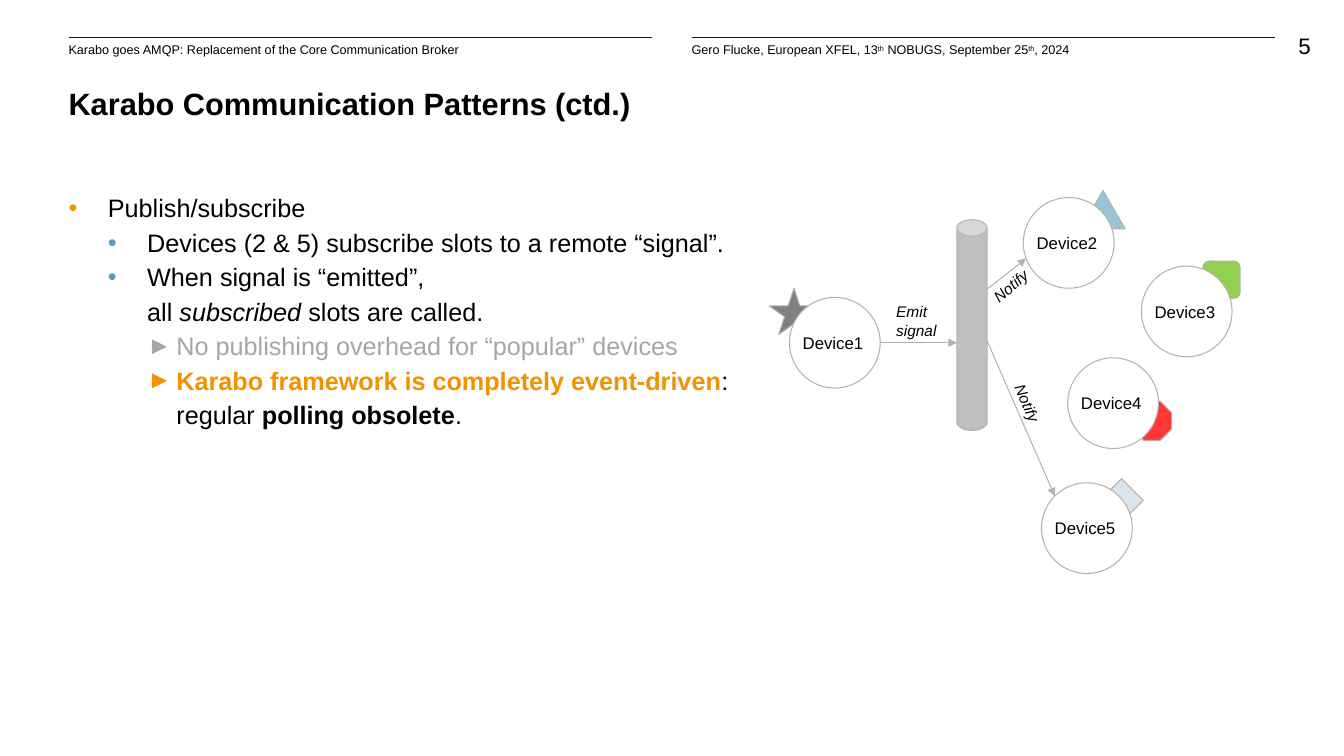
from math import cos, radians, sin

from lxml import etree
from pptx import Presentation
from pptx import util as u
from pptx.dml.color import RGBColor
from pptx.enum import shapes, text
from pptx.oxml.ns import qn

# Content: runs are (words, format)
TITLE = "Karabo Communication Patterns (ctd.)"
PAGE = "5"
HEADS = [
    [("Karabo goes AMQP: Replacement of the Core Communication Broker", {})],
    [("Gero Flucke, European XFEL, 13", {}), ("th", {"up": 30}),
     (" NOBUGS, September 25", {}), ("th", {"up": 30}), (", 2024", {})],
]
POINTS = [  # level, bullet colour, runs
    (0, "orange", [("Publish/subscribe", {})]),
    (1, "blue", [("Devices (2 & 5) subscribe slots to a remote “signal”.", {})]),
    (1, "blue", [("When signal is “emitted”,\nall ", {}),
                 ("subscribed", {"italic": True}), (" slots are called.", {})]),
    (2, "pale", [("No publishing overhead for “popular” devices", {"color": "pale"})]),
    (2, "orange", [("Karabo framework is completely event-driven",
                    {"color": "orange", "bold": True}),
                   (":\nregular ", {}), ("polling obsolete", {"bold": True}), (".", {})]),
]
LEVELS = [("•", 0.39, 0.39), ("•", 0.78, 0.39), ("►", 1.07, 0.29)]  # sign, left, hang

# Name: centre, then badge shape, colour and box
DEVICES = {
    "Device1": ((8.28, 3.4), "STAR_5_POINT", "star", (7.63, 2.86, 0.49, 0.46)),
    "Device2": ((10.6, 2.41), "ISOSCELES_TRIANGLE", "sky", (10.72, 1.89, 0.44, 0.38)),
    "Device3": ((11.77, 3.09), "ROUNDED_RECTANGLE", "green", (11.93, 2.59, 0.37, 0.37)),
    "Device4": ((11.04, 4), "OCTAGON", "red", (11.23, 3.98, 0.39, 0.39)),
    "Device5": ((10.78, 5.24), "DIAMOND", "ice", (10.91, 4.75, 0.43, 0.43)),
}
BROKER = (9.49, 2.18, 0.3, 2.09)
NOTIFY = [("Device2", 160, 2.87), ("Device5", 225, 3.38)]  # target, angle, start height
LABELS = [  # lines, box, turn
    (["Emit", "signal"], (8.79, 2.95, 0.61, 0.47), 0),
    (["Notify"], (9.73, 2.69, 0.6, 0.29), -40.2),
    (["Notify"], (9.89, 3.86, 0.6, 0.29), 66.9),
]

THEME = {
    "font": "Arial",
    "color": {"ink": "000000", "navy": "0D1546", "orange": "F39200", "blue": "559DBB",
              "pale": "A6A6A6", "line": "B2B2B2", "pipe": "BFBFBF", "white": "FFFFFF",
              "star": "808080", "sky": "99C4D6", "green": "92D050", "red": "FF3737",
              "ice": "C5D6E4"},
    "size": {"title": 22, "body": 18, "page": 16, "node": 12, "label": 11, "head": 9},
}

# Page grid: two equal columns
WIDE, HIGH = 13.33, 7.5
EDGE, COL, GAP = 0.68, 5.79, 0.39
FULL = 2 * COL + GAP
RADIUS = 0.45

deck = Presentation()
deck.slide_width, deck.slide_height = u.Inches(WIDE), u.Inches(HIGH)
slide = deck.slides.add_slide(deck.slide_layouts[1])
items = slide.shapes


def inch(*vals):
    return [u.Inches(v) for v in vals]


def tint(name):
    return RGBColor.from_string(THEME["color"][name])


def place(shape, box):
    for key, val in zip(("left", "top", "width", "height"), inch(*box)):
        setattr(shape, key, val)


def setup(shape, anchor="TOP", wrap=True, pad=(0, 0)):
    frame = shape.text_frame
    side, end = inch(*pad)
    form = {"margin_left": side, "margin_right": side, "margin_top": end,
            "margin_bottom": end, "word_wrap": wrap,
            "auto_size": text.MSO_AUTO_SIZE.NONE,
            "vertical_anchor": getattr(text.MSO_ANCHOR, anchor)}
    for key, val in form.items():
        setattr(frame, key, val)
    return frame


def write(para, runs, size, align="LEFT", **base):
    para.alignment = getattr(text.PP_ALIGN, align)
    for words, extra in runs:
        form = {"bold": False, "italic": False, **base, **extra}
        hue, lift = form.pop("color", "ink"), form.pop("up", 0)
        form.update(name=THEME["font"], size=u.Pt(THEME["size"][size]))
        for row, part in enumerate(words.split("\n")):
            if row:
                para.add_line_break()
            run = para.add_run()
            run.text = part
            for key, val in form.items():
                setattr(run.font, key, val)
            run.font.color.rgb = tint(hue)
            if lift:
                run.font._element.set("baseline", str(lift * 1000))


def bullet(para, sign, hue, left, hang):
    props = para._p.get_or_add_pPr()
    props.set("marL", str(u.Inches(left)))
    props.set("indent", str(-u.Inches(hang)))
    color = etree.SubElement(props, qn("a:buClr"))
    etree.SubElement(color, qn("a:srgbClr")).set("val", THEME["color"][hue])
    etree.SubElement(props, qn("a:buFont")).set("typeface", THEME["font"])
    etree.SubElement(props, qn("a:buChar")).set("char", sign)


def draw(kind, box, fill):
    shape = items.add_shape(getattr(shapes.MSO_SHAPE, kind), *inch(*box))
    shape.shadow.inherit = False
    shape.fill.solid()
    shape.fill.fore_color.rgb = tint(fill)
    shape.line.color.rgb = tint("line")
    shape.line.width = u.Pt(0.75)
    return shape


def link(start, end, hue="line", width=0.75, arrow=True):
    line = items.add_connector(shapes.MSO_CONNECTOR.STRAIGHT, *inch(*start, *end))
    line.line.color.rgb = tint(hue)
    line.line.width = u.Pt(width)
    if arrow:
        etree.SubElement(line.line._get_or_add_ln(), qn("a:tailEnd")).set("type", "triangle")
    etree.SubElement(line._element.spPr, qn("a:effectLst"))


# Page header
for num, runs in enumerate(HEADS):
    left = EDGE + num * (COL + GAP)
    link((left, 0.37), (left + COL, 0.37), "navy", 0.5, False)
    head = items.add_textbox(*inch(left, 0.42, COL, 0.24))
    write(setup(head).paragraphs[0], runs, "head")
page = items.add_textbox(*inch(12.44, 0.32, 0.56, 0.32))
write(setup(page).paragraphs[0], [(PAGE, {})], "page", "RIGHT")

# Title and list
place(items.title, (EDGE, 0.78, FULL, 0.43))
write(setup(items.title, "BOTTOM").paragraphs[0], [(TITLE, {})], "title", bold=True)
body = slide.placeholders[1]
place(body, (EDGE, 1.87, 6.69, 4.6))
frame = setup(body)
for num, (level, hue, runs) in enumerate(POINTS):
    para = frame.add_paragraph() if num else frame.paragraphs[0]
    para.level = level
    para.line_spacing, para.space_before = 1.14, u.Pt(0)
    sign, left, hang = LEVELS[level]
    bullet(para, sign, hue, left, hang)
    write(para, runs, "body")

# Broker and devices
draw("CAN", BROKER, "pipe").adjustments[0] = 0.54
for name, ((mid, row), kind, hue, box) in DEVICES.items():
    badge = draw(kind, box, hue)
    if hue == "ice":
        color = badge.fill._xPr.find(qn("a:solidFill"))[0]
        etree.SubElement(color, qn("a:alpha")).set("val", "63000")
    node = draw("OVAL", (mid - RADIUS, row - RADIUS, 2 * RADIUS, 2 * RADIUS), "white")
    write(setup(node, "MIDDLE", False).paragraphs[0], [(name, {})], "node")

# Signal flow
mid, row = DEVICES["Device1"][0]
link((mid + RADIUS, row), (BROKER[0], row))
for name, angle, start in NOTIFY:
    mid, row = DEVICES[name][0]
    turn = radians(angle)
    link((BROKER[0] + BROKER[2], start),
         (mid + RADIUS * cos(turn), row + RADIUS * abs(sin(turn)) * (1 if angle < 180 else -1)))
for lines, box, turn in LABELS:
    label = items.add_textbox(*inch(*box))
    label.rotation = turn
    frame = setup(label, wrap=False, pad=(0.1, 0.05))
    for num, words in enumerate(lines):
        para = frame.add_paragraph() if num else frame.paragraphs[0]
        write(para, [(words, {})], "label", italic=True)

deck.save("out.pptx")
